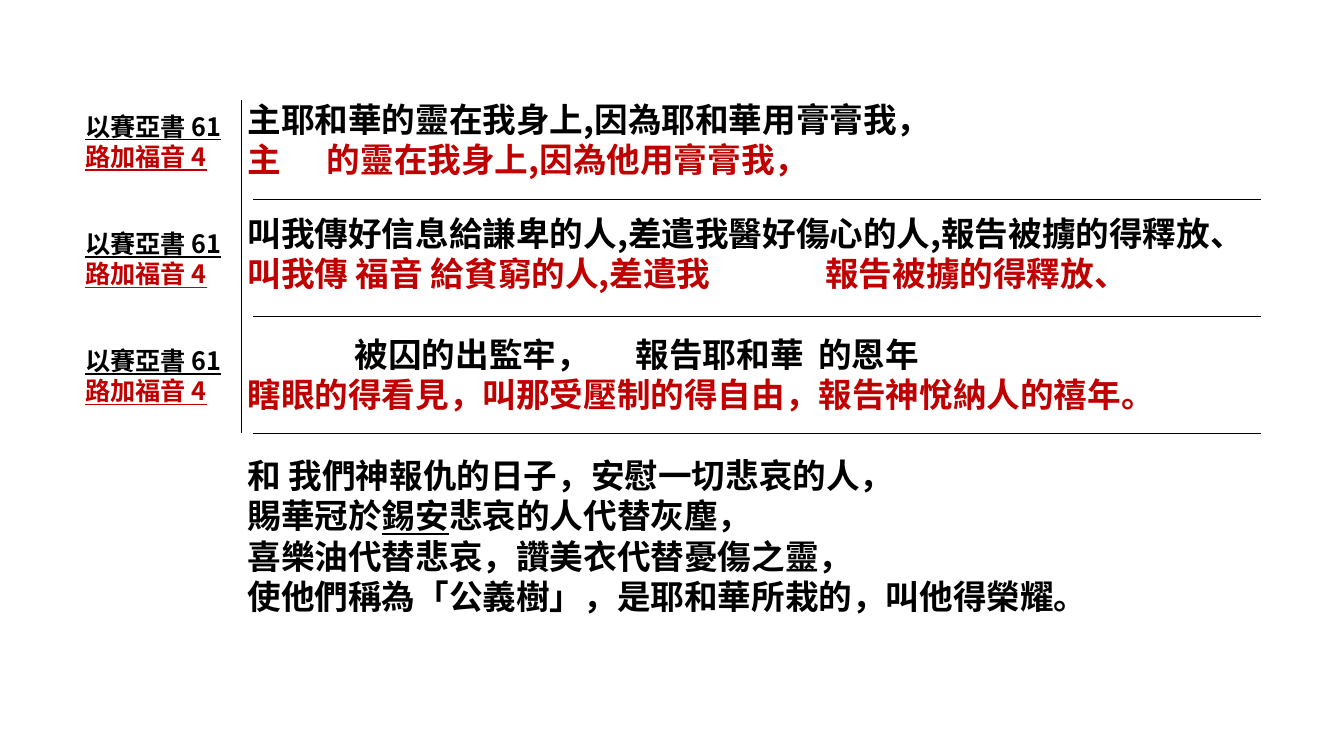
from lxml import etree
from pptx import Presentation
from pptx.dml.color import RGBColor
from pptx.enum.shapes import MSO_CONNECTOR
from pptx.oxml.ns import qn
from pptx.util import Cm, Pt

STRAIGHT = MSO_CONNECTOR.STRAIGHT
BLACK = RGBColor(0x00, 0x00, 0x00)
RED = RGBColor(0xC0, 0x00, 0x00)
FONT = "Noto Sans CJK SC"
LINE_PITCH = 1.2  # line height per point of text size

# Content: text, colour, space before (pt), tab stops (cm); _ encloses underlined words
VERSES = [
    ("主耶和華的靈在我身上,因為耶和華用膏膏我，", BLACK, 0, []),
    ("主\t的靈在我身上,因為他用膏膏我，", RED, 0, []),
    ("叫我傳好信息給謙卑的人,差遣我醫好傷心的人,報告被擄的得釋放、", BLACK, 24, []),
    ("叫我傳 福音 給貧窮的人,差遣我\t報告被擄的得釋放、", RED, 0, [14.56]),
    ("\t被囚的出監牢，\t報告耶和華\t的恩年", BLACK, 28.8, [2.7, 9.78, 14.38]),
    ("瞎眼的得看見，叫那受壓制的得自由，報告神悅納人的禧年。", RED, 0, []),
    ("和 我們神報仇的日子，安慰一切悲哀的人，", BLACK, 28.8, []),
    ("賜華冠於_錫安_悲哀的人代替灰塵，", BLACK, 0, []),
    ("喜樂油代替悲哀，讚美衣代替憂傷之靈，", BLACK, 0, []),
    ("使他們稱為「公義樹」，是耶和華所栽的，叫他得榮耀。", BLACK, 0, []),
]
VERSES[1] = VERSES[1][:3] + ([2.0],)
LABELS = [("_以賽亞書 61_", BLACK, 0, []), ("_路加福音 4_", RED, 0, [])]

# Layout in cm
ROWS, ROW_PITCH = 3, 2.95
LABEL_TOP, RULE_TOP = 2.67, 5.03


def add_text(slide, left, top, width, height, lines, size):
    frame = slide.shapes.add_textbox(Cm(left), Cm(top), Cm(width), Cm(height)).text_frame
    frame.word_wrap = True
    for index, (text, color, space, tabs) in enumerate(lines):
        paragraph = frame.paragraphs[0] if index == 0 else frame.add_paragraph()
        paragraph.line_spacing = Pt(size * LINE_PITCH)
        paragraph.space_before = Pt(space)
        if tabs:
            tab_list = etree.SubElement(paragraph._p.get_or_add_pPr(), qn("a:tabLst"))
            for position in tabs:
                etree.SubElement(tab_list, qn("a:tab"), pos=str(Cm(position)), algn="l")
        font = paragraph.font
        font.size, font.bold, font.name = Pt(size), True, FONT
        font.color.rgb = color
        etree.SubElement(font._element, qn("a:ea"), typeface=FONT)
        for part, words in enumerate(text.split("_")):
            if words:
                run = paragraph.add_run()
                run.text = words
                if part % 2:
                    run.font.underline = True


def add_rule(slide, left, top, right, bottom):
    rule = slide.shapes.add_connector(STRAIGHT, Cm(left), Cm(top), Cm(right), Cm(bottom))
    rule.line.color.rgb = BLACK
    rule.line.width = Pt(0.5)
    etree.SubElement(rule._element.spPr, qn("a:effectLst"))


def main():
    presentation = Presentation()
    presentation.slide_width, presentation.slide_height = Cm(33.87), Cm(19.05)
    slide = presentation.slides.add_slide(presentation.slide_layouts[6])

    # Verses
    add_text(slide, 5.99, 2.36, 26.37, 13.77, VERSES, 24)

    # Book labels and the rule under each row
    for row in range(ROWS):
        offset = row * ROW_PITCH
        add_text(slide, 1.9, LABEL_TOP + offset, 4.6, 1.8, LABELS, 18)
        add_rule(slide, 6.38, RULE_TOP + offset, 31.78, RULE_TOP + offset)

    # Divider between labels and verses
    add_rule(slide, 6.07, 2.51, 6.07, 10.9)

    presentation.save("out.pptx")


if __name__ == "__main__":
    main()
